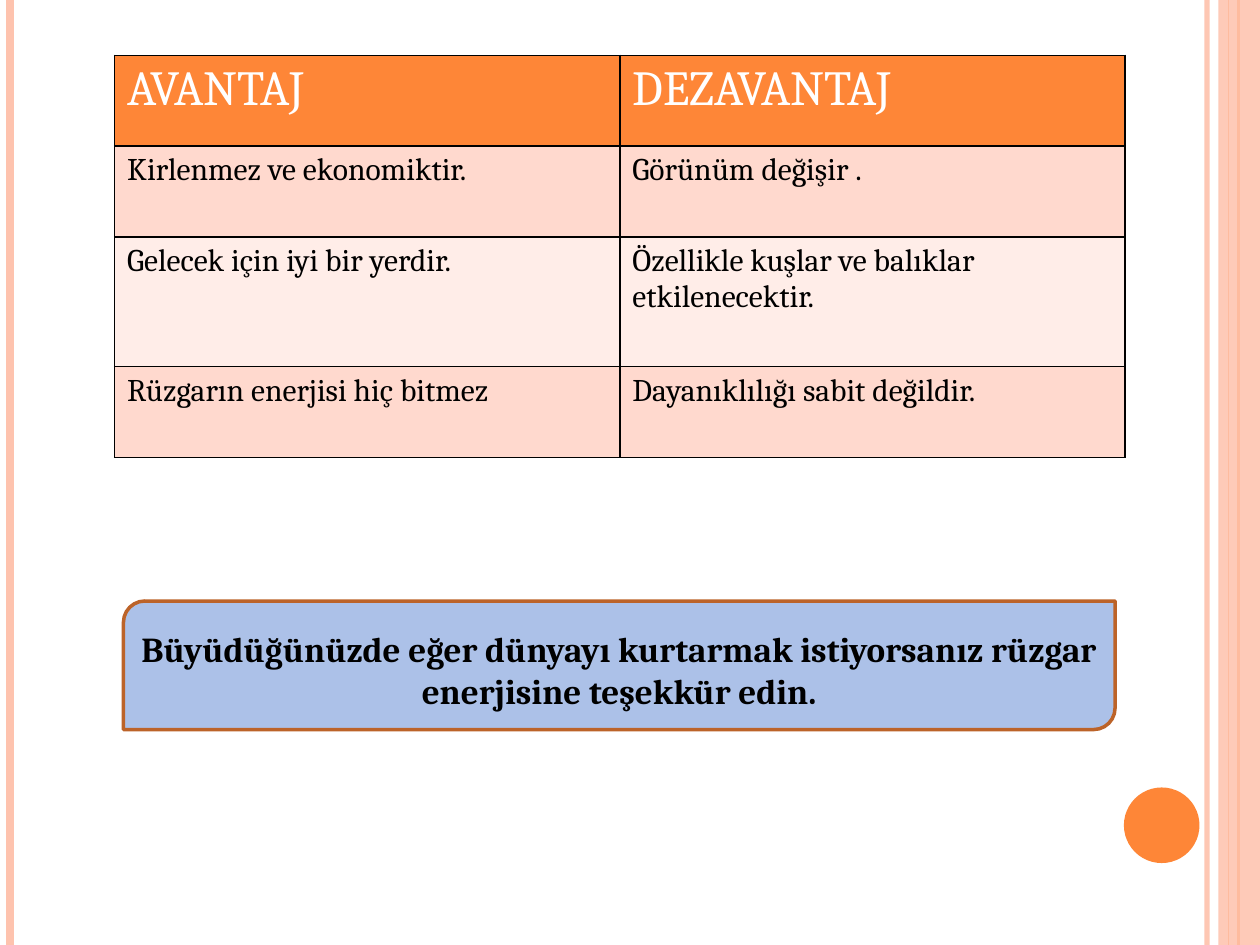
"""Build a slide weighing the pros and cons of wind energy."""
from lxml import etree
from pptx import Presentation
from pptx import util as u
from pptx.dml.color import RGBColor
from pptx.enum import shapes, text
from pptx.oxml.ns import qn

ORANGE, PEACH, BLACK = "FE8637", "FEC3AE", "000000"


def color(target, value, alpha=None):
    target.solid()
    target.fore_color.rgb = RGBColor.from_string(value)
    if alpha:
        node = target._xPr.find(qn("a:solidFill"))[0]
        etree.SubElement(node, qn("a:alpha"), val=str(alpha * 1000))


def write(frame, content, size=18, value=BLACK, bold=False, align=text.PP_ALIGN.LEFT):
    paragraph = frame.paragraphs[0]
    paragraph.alignment = align
    run = paragraph.add_run()
    run.text = content
    run.font.name = "Cambria"
    run.font.size = u.Pt(size)
    run.font.bold = bold
    color(run.font.fill, value)


presentation = Presentation()
presentation.slide_width, presentation.slide_height = u.Inches(10), u.Inches(7.5)
slide = presentation.slides.add_slide(presentation.slide_layouts[6])

stripes = [(9.58, PEACH, 3, 93), (0.08, PEACH, 4.5, None), (9.83, ORANGE, 1.5, None),
           (9.75, ORANGE, 0.75, None)]
decorations = [
    (shapes.MSO_SHAPE.RECTANGLE, (9.67, 0, 0.33, 7.5), PEACH, 87, None),
    (shapes.MSO_SHAPE.OVAL, (8.92, 6.25, 0.6, 0.6), ORANGE, None, None),
    (shapes.MSO_SHAPE.ROUND_2_DIAG_RECTANGLE, (0.98, 4.77, 7.87, 1.02), "ACC1E8", None, "BC6329"),
]

for x, value, width, alpha in stripes:
    line = slide.shapes.add_connector(
        shapes.MSO_CONNECTOR.STRAIGHT, u.Inches(x), 0, u.Inches(x), u.Inches(7.5))
    line.line.width = u.Pt(width)
    color(line.line.fill, value, alpha)
    etree.SubElement(line._element.spPr, qn("a:effectLst"))

for kind, box, value, alpha, outline in decorations:
    shape = slide.shapes.add_shape(kind, *map(u.Inches, box))
    shape.shadow.inherit = False
    color(shape.fill, value, alpha)
    if outline:
        color(shape.line.fill, outline)
        shape.line.width = u.Pt(2)
    else:
        shape.line.fill.background()

rows = [
    (0.72, ORANGE, "AVANTAJ", "DEZAVANTAJ"),
    (0.72, "FFD9CE", "Kirlenmez ve ekonomiktir.", "Görünüm değişir ."),
    (1.03, "FFEDE8", "Gelecek için iyi bir yerdir.",
     "Özellikle kuşlar ve balıklar etkilenecektir."),
    (0.72, "FFD9CE", "Rüzgarın enerjisi hiç bitmez", "Dayanıklılığı sabit değildir."),
]
table = slide.shapes.add_table(
    len(rows), 2, *map(u.Inches, (0.91, 0.44, 8.02, 3.19))).table
for row_index, (height, value, *labels) in enumerate(rows):
    table.rows[row_index].height = u.Inches(height)
    header = {"size": 28, "value": "FFFFFF"} if row_index == 0 else {}
    for column_index, label in enumerate(labels):
        cell = table.cell(row_index, column_index)
        properties = cell._tc.get_or_add_tcPr()
        for side in ("lnL", "lnR", "lnT", "lnB"):
            border = etree.SubElement(properties, qn(f"a:{side}"), w=str(u.Pt(1)))
            border_fill = etree.SubElement(border, qn("a:solidFill"))
            etree.SubElement(border_fill, qn("a:srgbClr"), val=BLACK)
        color(cell.fill, value)
        write(cell.text_frame, label, **header)

message = slide.shapes.add_textbox(*map(u.Inches, (0.98, 4.93, 7.87, 0.77))).text_frame
message.word_wrap = True
message.auto_size = text.MSO_AUTO_SIZE.SHAPE_TO_FIT_TEXT
write(message, "Büyüdüğünüzde eğer dünyayı kurtarmak istiyorsanız rüzgar enerjisine teşekkür edin.",
      size=20, bold=True, align=text.PP_ALIGN.CENTER)

presentation.save("out.pptx")
